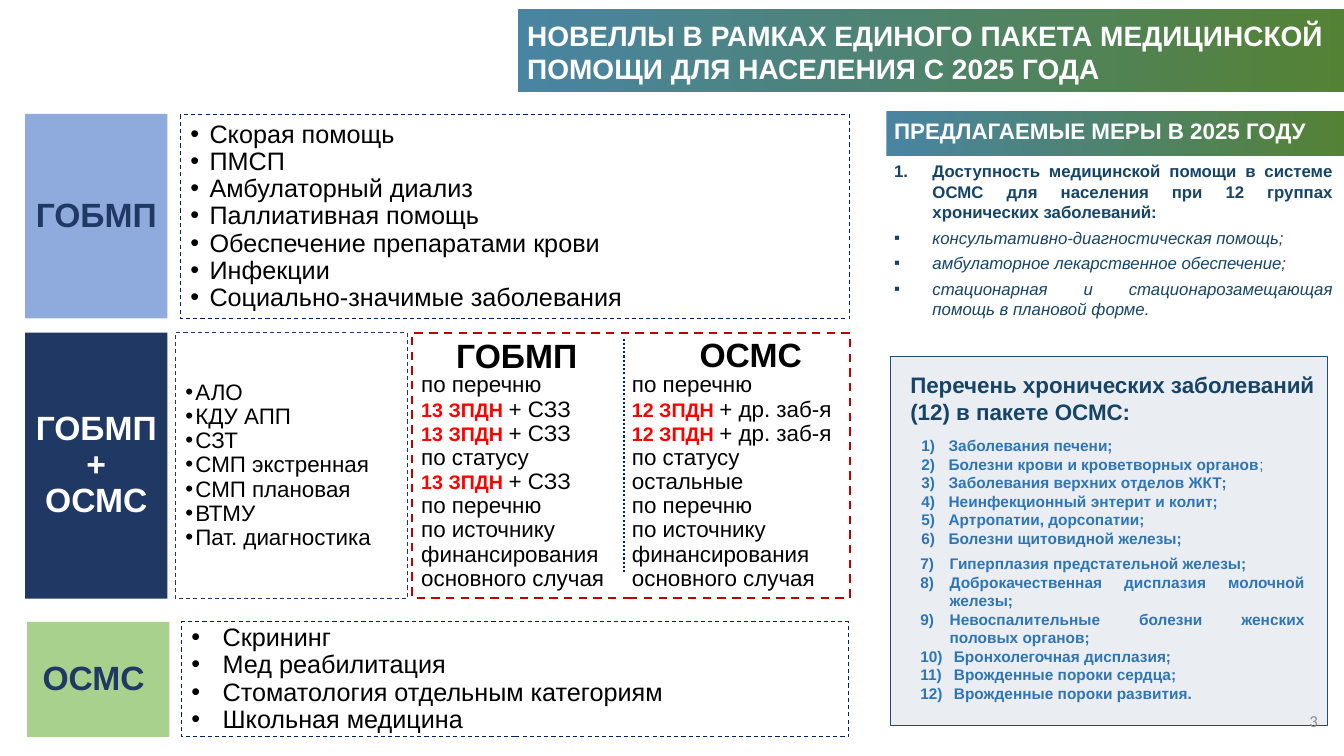
from lxml.etree import SubElement
from pptx import Presentation
from pptx.dml.color import RGBColor
from pptx.enum.dml import MSO_LINE
from pptx.enum.shapes import MSO_CONNECTOR, MSO_SHAPE
from pptx.enum.text import MSO_ANCHOR, PP_ALIGN
from pptx.oxml.ns import qn
from pptx.util import Inches, Pt

WHITE = RGBColor(0xFF, 0xFF, 0xFF)
BLACK = RGBColor(0, 0, 0)
GRAY = RGBColor(0x8C, 0x8C, 0x8C)
RED = RGBColor(0xFF, 0, 0)
CRIMSON = RGBColor(0xC0, 0, 0)
NAVY = RGBColor(0x20, 0x38, 0x64)
DEEP = RGBColor(0, 0x20, 0x60)
SKY = RGBColor(0x8F, 0xAA, 0xDC)
LIME = RGBColor(0xA9, 0xD1, 0x8E)
TEAL = RGBColor(0x49, 0x84, 0xA2)
GREEN = RGBColor(0x54, 0x82, 0x35)
INK = RGBColor(0x15, 0x44, 0x68)
BLUE = RGBColor(0x2E, 0x75, 0xB6)
EDGE = RGBColor(0x1F, 0x4E, 0x79)
PALE = RGBColor(0xD6, 0xDC, 0xE5)
MID, TOP = MSO_ANCHOR.MIDDLE, MSO_ANCHOR.TOP
LEFT, RIGHT = PP_ALIGN.LEFT, PP_ALIGN.RIGHT
CENTER, JUST = PP_ALIGN.CENTER, PP_ALIGN.JUSTIFY

deck = Presentation()
deck.slide_width, deck.slide_height = Inches(13.33), Inches(7.5)
slide = deck.slides.add_slide(deck.slide_layouts[6])


def box(at, fill=None, line=None, width=0.75, dash=None):
    """Rectangle; a pair of colours as fill gives a gradient."""
    shape = slide.shapes.add_shape(MSO_SHAPE.RECTANGLE, *map(Inches, at))
    shape.shadow.inherit = False
    if fill is None:
        shape.fill.background()
    elif isinstance(fill, list):
        shape.fill.gradient()
        shape.fill.gradient_angle = 0
        for stop, color in zip(shape.fill.gradient_stops, fill):
            stop.color.rgb = color
    else:
        shape.fill.solid()
        shape.fill.fore_color.rgb = fill
    if line is None:
        shape.line.fill.background()
    else:
        shape.line.color.rgb = line
        shape.line.width = Pt(width)
        shape.line.dash_style = dash
    return shape


def write(spot, lines, size, color, bold=False, italic=False, align=LEFT,
          anchor=TOP, space=None, after=0, bullet=None, start=1, indent=0,
          accent=None, face="Arial"):
    """Add lines to a shape or a new text box; *stars* mark the accent."""
    if isinstance(spot, tuple):
        spot = slide.shapes.add_textbox(*map(Inches, spot))
    frame = spot.text_frame
    frame.word_wrap = True
    frame.vertical_anchor = anchor
    for line in lines:
        para = frame.add_paragraph() if frame.text else frame.paragraphs[0]
        para.alignment = align
        para.space_after = Pt(after)
        if space:
            para.line_spacing = space
        if bullet:
            props = para._p.get_or_add_pPr()
            props.set("marL", str(Inches(indent)))
            props.set("indent", str(-Inches(indent)))
            if bullet.startswith("arabic"):
                mark = SubElement(props, qn("a:buAutoNum"), type=bullet)
                if start > 1:
                    mark.set("startAt", str(start))
            else:
                SubElement(props, qn("a:buFont"), typeface="Arial")
                SubElement(props, qn("a:buChar"), char=bullet)
        plain = (size, color, bold)
        parts = [(text, accent if odd % 2 else plain)
                 for odd, text in enumerate(line.split("*")) if text]
        for text, look in parts:
            run = para.add_run()
            run.text = text
            font = run.font if len(parts) > 1 else para.font
            font.name, font.italic = face, italic
            font.size, font.color.rgb, font.bold = Pt(look[0]), look[1], look[2]
    return spot


# Title
box((5.14, 0.09, 8.2, 0.82), [TEAL, GREEN])
write((5.13, 0.13, 8.2, 0.77),
      ["НОВЕЛЛЫ В РАМКАХ ЕДИНОГО ПАКЕТА МЕДИЦИНСКОЙ ПОМОЩИ ДЛЯ НАСЕЛЕНИЯ С 2025 ГОДА"],
      20, WHITE, bold=True)

# Package names
for at, fill, color, name in [
    ((0.25, 1.13, 1.41, 2.03), SKY, NAVY, "ГОБМП"),
    ((0.25, 3.3, 1.41, 2.64), NAVY, WHITE, "ГОБМП + ОСМС"),
    ((0.27, 6.17, 1.41, 1.14), LIME, NAVY, "ОСМС "),
]:
    write(box(at, fill), [name], 24, color, bold=True, align=CENTER,
          anchor=MID, space=0.9)

# Service lists
for at, edge, size, indent, items in [
    ((1.79, 1.14, 6.64, 2.02), DEEP, 18, 0.19,
     ["Скорая помощь", "ПМСП", "Амбулаторный диализ", "Паллиативная помощь",
      "Обеспечение препаратами крови", "Инфекции",
      "Социально-значимые заболевания"]),
    ((1.74, 3.3, 2.3, 2.64), NAVY, 16, 0.1,
     ["АЛО", "КДУ АПП", "СЗТ", "СМП экстренная", "СМП плановая", "ВТМУ",
      "Пат. диагностика"]),
    ((1.8, 6.17, 6.62, 1.14), DEEP, 18, 0.31,
     ["Скрининг", "Мед реабилитация", "Стоматология отдельным категориям",
      "Школьная медицина"]),
]:
    write(box(at, line=edge, dash=MSO_LINE.DASH), items, size, BLACK,
          anchor=MID, space=0.9, bullet="•", indent=indent)

# Split between the two packages
source = "по источнику финансирования основного случая"
share = "*13 ЗПДН *+ СЗЗ"
for at, lines in [
    ((4.08, 3.77, 2.06, 2.03),
     ["по перечню", share, share, "по статусу", share, "по перечню", source]),
    ((6.17, 3.63, 2.34, 2.31),
     ["по перечню", "*12 ЗПДН *+ др. заб-я *12 ЗПДН *+ др. заб-я",
      "по статусу", "остальные", "по перечню", source]),
]:
    write(at, lines, 16, BLACK, anchor=MID, space=0.9, accent=(14, RED, True))
write((4.42, 3.27, 1.41, 0.5), ["ГОБМП"], 24, BLACK, bold=True, align=CENTER)
write((6.84, 3.26, 1.38, 0.5), ["ОСМС"], 24, BLACK, bold=True)
box((4.09, 3.3, 4.34, 2.63), line=CRIMSON, width=1.5, dash=MSO_LINE.DASH)
rule = slide.shapes.add_connector(MSO_CONNECTOR.STRAIGHT, Inches(6.19),
                                  Inches(3.36), Inches(6.19), Inches(5.68))
rule.line.color.rgb = DEEP
rule.line.width = Pt(1.5)
rule.line.dash_style = MSO_LINE.ROUND_DOT
SubElement(rule._element.spPr, qn("a:effectLst"))

# Proposed measures
box((8.79, 1.1, 4.55, 0.45), [TEAL, GREEN])
write((8.77, 1.11, 4.36, 0.37), ["ПРЕДЛАГАЕМЫЕ МЕРЫ В 2025 ГОДУ"], 16, WHITE,
      bold=True)
plan = write((8.77, 1.55, 4.55, 1.68),
             ["Доступность медицинской помощи в системе ОСМС для населения "
              "при 12 группах хронических заболеваний:"],
             12, INK, bold=True, align=JUST, after=4,
             bullet="arabicPeriod", indent=0.38)
write(plan, ["консультативно-диагностическая помощь;",
             "амбулаторное лекарственное обеспечение;",
             "стационарная и стационарозамещающая помощь в плановой форме."],
      12, INK, italic=True, align=JUST, after=4, bullet="▪", indent=0.38)

# Chronic diseases
panel = box((8.83, 3.54, 4.34, 3.66), PALE, EDGE)
tint = next(panel._element.spPr.iter(qn("a:srgbClr")))
SubElement(tint, qn("a:alpha"), val="50000")
write((8.93, 3.63, 4.24, 0.64),
      ["Перечень хронических заболеваний (12) в пакете ОСМС:"], 16, INK,
      bold=True)
for at, start, indent, items in [
    ((9.04, 4.28, 4, 1.21), 1, 0.27,
     ["Заболевания печени;", "Болезни крови и кроветворных органов*;*",
      "Заболевания верхних отделов ЖКТ;", "Неинфекционный энтерит и колит;",
      "Артропатии, дорсопатии;", "Болезни щитовидной железы;"]),
    ((9.03, 5.45, 4.01, 1.58), 7, 0.29,
     ["Гиперплазия предстательной железы;",
      "Доброкачественная дисплазия молочной железы;",
      "Невоспалительные болезни женских половых органов;",
      " Бронхолегочная дисплазия;", " Врожденные пороки сердца;",
      " Врожденные пороки развития."]),
]:
    write(at, items, 11, BLUE, bold=True, align=JUST, bullet="arabicParenR",
          start=start, indent=indent, accent=(11, BLUE, False))

# Slide number
write((10.17, 6.95, 3, 0.4), ["3"], 12, GRAY, align=RIGHT, anchor=MID,
      face="Calibri")

deck.save("out.pptx")
